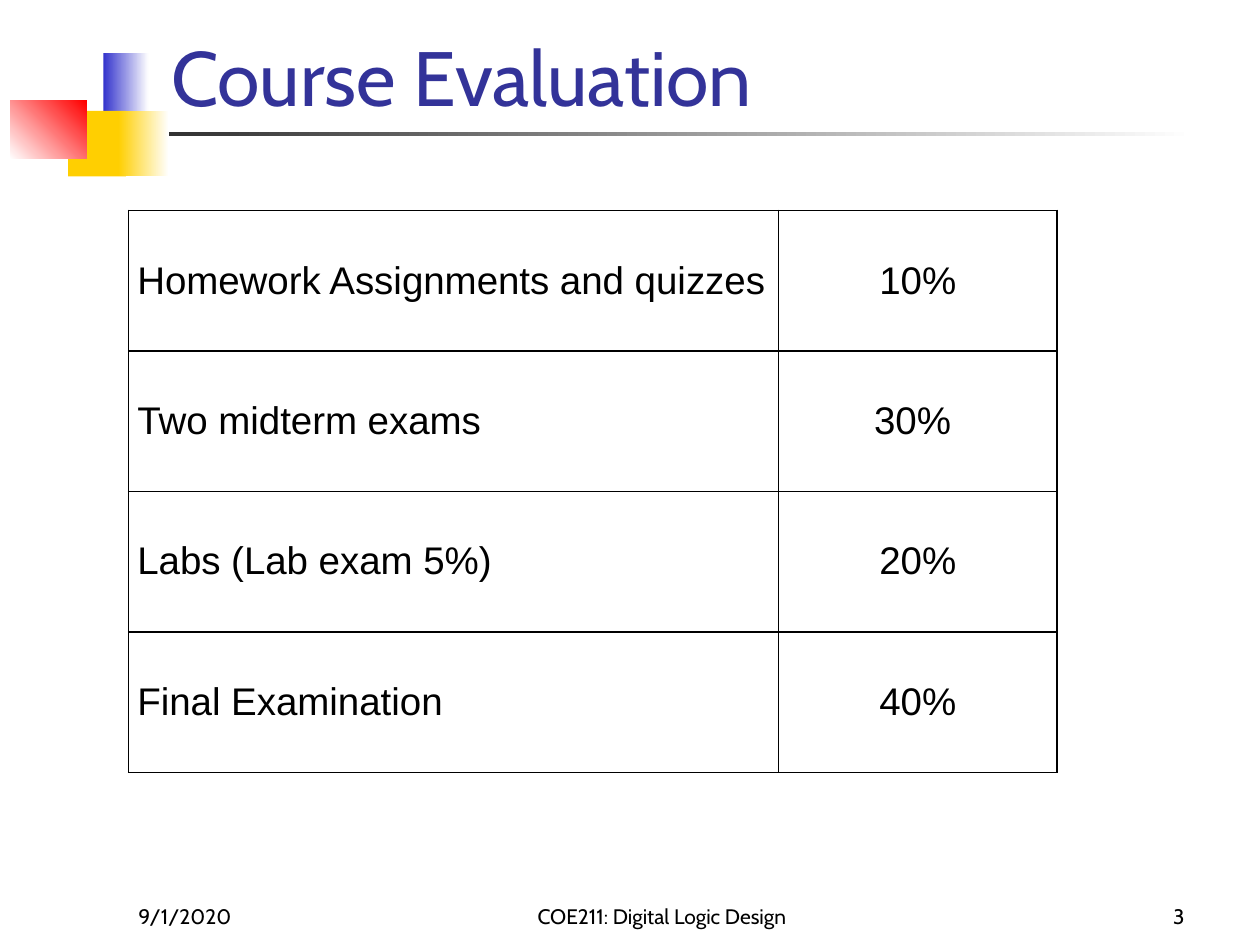
from lxml import etree
from pptx import Presentation
from pptx.dml.color import RGBColor
from pptx.enum.shapes import MSO_SHAPE
from pptx.enum.text import MSO_ANCHOR, PP_ALIGN
from pptx.oxml import parse_xml
from pptx.util import Inches, Pt

RECT = MSO_SHAPE.RECTANGLE
BOTTOM, MIDDLE = MSO_ANCHOR.BOTTOM, MSO_ANCHOR.MIDDLE
LEFT, MID, RIGHT = PP_ALIGN.LEFT, PP_ALIGN.CENTER, PP_ALIGN.RIGHT
NS = "http://schemas.openxmlformats.org/drawingml/2006/main"

# Decoration: left, top, width, height, colours (two make a gradient), angle
BLOCKS = [
    (0.48, 1.05, 9, 0.03, ("1C1C1C", "FFFFFF"), 0),
    (0.82, 0.42, 0.36, 0.52, ("3333CC", "FFFFFF"), 0),
    (0.54, 0.88, 0.46, 0.52, ("FFCF01",), 0),
    (0.94, 0.88, 0.4, 0.52, ("FFCF01", "FFFFFF"), 0),
    (0.08, 0.8, 0.61, 0.46, ("FFFFFF", "FF0000"), 45),
]
FOOT = {"top": 6.92, "high": 0.5, "size": 12, "tint": "000000"}
TEXTS = [
    ("Course Evaluation", 1.26, 8.52, LEFT,
     {"top": 0.08, "high": 0.94, "size": 44, "tint": "333399"}),
    ("9/1/2020", 1, 2.08, LEFT, FOOT),
    ("COE211: Digital Logic Design", 3.67, 3.17, MID, FOOT),
    ("3", 7.42, 2.08, RIGHT, FOOT),
]
GRADES = [
    ("Homework Assignments and quizzes", "10%"),
    ("Two midterm exams", "30% "),
    ("Labs (Lab exam 5%)", "20%"),
    ("Final Examination", "40%"),
]
COLS = (5.16, 2.21)
ROW = 1.115
ALIGNS = (LEFT, MID)


def color(code):
    return RGBColor.from_string(code)


def style(para, face, size, tint, align):
    para.alignment = align
    for key, value in {"name": face, "size": Pt(size)}.items():
        setattr(para.font, key, value)
    para.font.color.rgb = color(tint)


def block(slide, left, top, wide, high, tints, angle):
    shape = slide.shapes.add_shape(RECT, *map(Inches, (left, top, wide, high)))
    shape.shadow.inherit = False
    shape.line.fill.background()
    if len(tints) == 1:
        shape.fill.solid()
        shape.fill.fore_color.rgb = color(tints[0])
        return
    shape.fill.gradient()
    shape.fill.gradient_angle = angle
    for stop, tint in zip(shape.fill.gradient_stops, tints):
        stop.color.rgb = color(tint)


def label(slide, text, left, wide, align, form):
    box = slide.shapes.add_textbox(
        *map(Inches, (left, form["top"], wide, form["high"])))
    frame = box.text_frame
    frame.word_wrap = True
    frame.vertical_anchor = BOTTOM
    frame.text = text
    style(frame.paragraphs[0], "Cabin", form["size"], form["tint"], align)


def border(cell, tint, width):
    props = cell._tc.get_or_add_tcPr()
    for side in "LRTB":
        props.append(parse_xml(
            f'<a:ln{side} xmlns:a="{NS}" w="{Pt(width)}"><a:solidFill>'
            f'<a:srgbClr val="{tint}"/></a:solidFill></a:ln{side}>'))


def grid(slide):
    table = slide.shapes.add_table(
        len(GRADES), len(COLS), Inches(1.02), Inches(1.67),
        Inches(sum(COLS)), Inches(ROW * len(GRADES))).table
    table.first_row = table.horz_banding = False
    for col, wide in zip(table.columns, COLS):
        col.width = Inches(wide)
    form = {"margin_left": Inches(0.07), "margin_right": Inches(0.07),
            "margin_top": 0, "margin_bottom": 0, "vertical_anchor": MIDDLE}
    for row, texts in zip(table.rows, GRADES):
        row.height = Inches(ROW)
        for cell, text, align in zip(row.cells, texts, ALIGNS):
            cell.text = text
            for key, value in form.items():
                setattr(cell, key, value)
            style(cell.text_frame.paragraphs[0], "Arial", 22, "000000", align)
            border(cell, "000000", 1)
            cell.fill.background()


def main():
    deck = Presentation()
    deck.slide_width, deck.slide_height = Inches(10), Inches(7.5)
    slide = deck.slides.add_slide(deck.slide_layouts[6])
    for item in BLOCKS:
        block(slide, *item)
    for item in TEXTS:
        label(slide, *item)
    grid(slide)
    deck.save("out.pptx")


if __name__ == "__main__":
    main()
